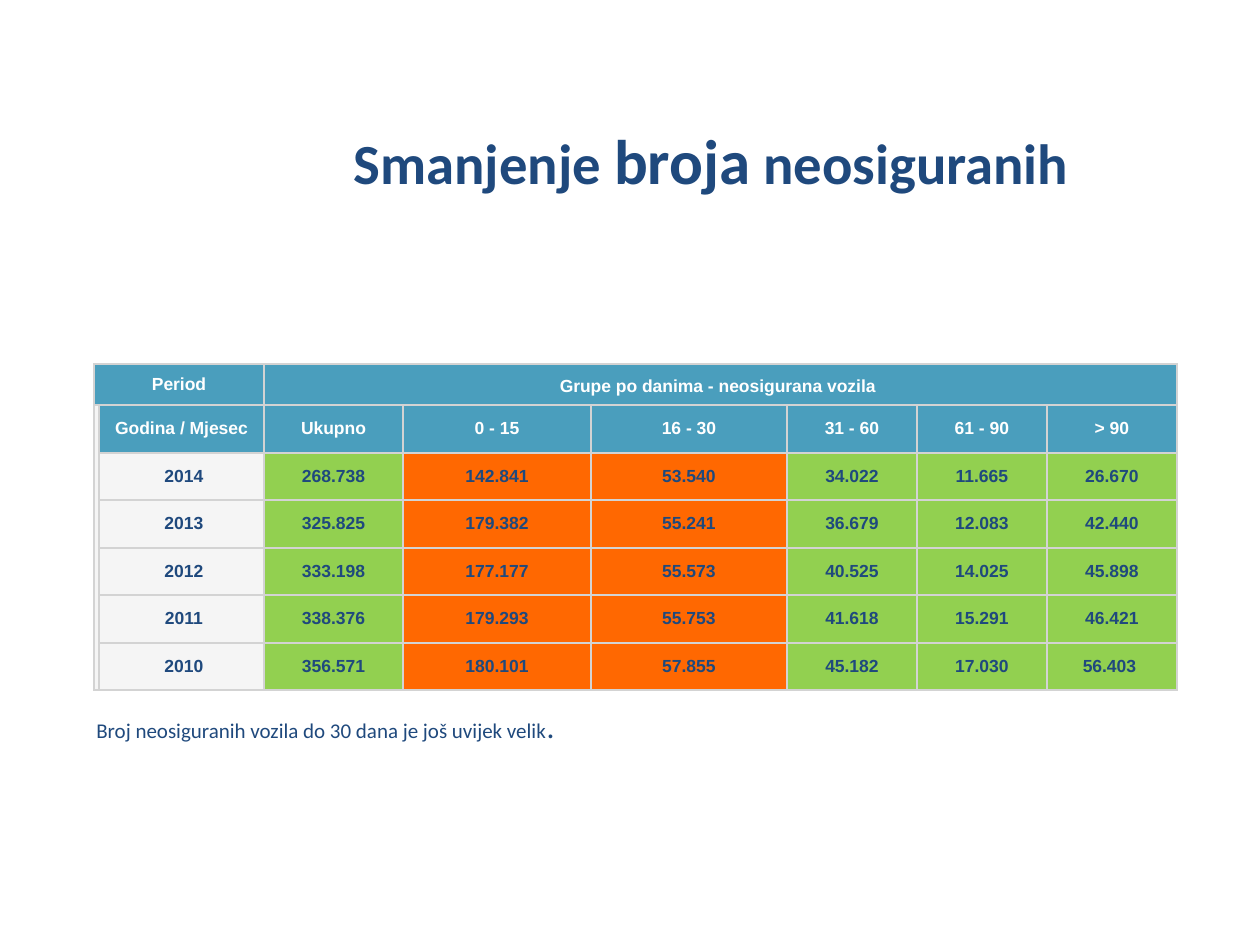
from typing import NamedTuple

from lxml import etree
from pptx import Presentation
from pptx import util as u
from pptx.dml.color import RGBColor
from pptx.enum import text as t
from pptx.oxml.ns import qn

NAVY = RGBColor(0x1F, 0x49, 0x7D)
WHITE = RGBColor(0xFF, 0xFF, 0xFF)
BLACK = RGBColor(0, 0, 0)
TEAL = RGBColor(0x4A, 0x9E, 0xBD)
PALE = RGBColor(0xF5, 0xF5, 0xF5)
GREEN = RGBColor(0x92, 0xD0, 0x50)
ORANGE = RGBColor(0xFF, 0x68, 0x01)
GRAY = RGBColor(0xD3, 0xD3, 0xD3)

SCALE = 914400 / 126
COLS = (5, 165, 139, 188, 196, 130, 130, 130)
ROWS = (41, 48, 47, 48, 47, 48, 47)
FILLS = (PALE, PALE, GREEN, ORANGE, ORANGE, GREEN, GREEN, GREEN)
HEADS = ("Godina / Mjesec", "Ukupno", "0 - 15", "16 - 30", "31 - 60", "61 - 90", "> 90")
DATA = (
    (" 2014", "268.738", "142.841", "53.540", "34.022", "11.665", "26.670"),
    (" 2013", "325.825", "179.382", "55.241", "36.679", "12.083", "42.440"),
    (" 2012", "333.198", "177.177", "55.573", "40.525", "14.025", "45.898"),
    (" 2011", "338.376", "179.293", "55.753", "41.618", "15.291", "46.421"),
    (" 2010", "356.571", "180.101", "57.855", "45.182", "17.030", "56.403 "),
)


class Box(NamedTuple):
    left: int
    top: int
    width: int
    height: int


def px(n: int) -> int:
    return round(n * SCALE)


def write(frame, words: str, *, size: float, color: RGBColor, font: str = "Calibri",
          bold: bool = False, align=t.PP_ALIGN.CENTER) -> None:
    para = frame.paragraphs[0]
    para.alignment = align
    run = para.add_run()
    run.text = words
    run.font.size = u.Pt(size)
    run.font.name = font
    run.font.bold = bold
    run.font.color.rgb = color


def add_box(slide, box: Box, wrap: bool, anchor):
    frame = slide.shapes.add_textbox(*map(px, box)).text_frame
    frame.word_wrap = wrap
    frame.vertical_anchor = anchor
    return frame


def edge(cell, sides: str) -> None:
    props = cell._tc.get_or_add_tcPr()
    for i, side in enumerate("LRTB"):
        line = etree.Element(qn(f"a:ln{side}"), w=str(u.Pt(1)))
        if side in sides:
            fill = etree.SubElement(line, qn("a:solidFill"))
            etree.SubElement(fill, qn("a:srgbClr"), val=str(GRAY))
        else:
            etree.SubElement(line, qn("a:noFill"))
        props.insert(i, line)


def style(cell, fill: RGBColor, sides: str = "LRTB") -> None:
    cell.margin_left = cell.margin_right = cell.margin_top = cell.margin_bottom = 0
    cell.vertical_anchor = t.MSO_ANCHOR.MIDDLE
    cell.fill.solid()
    cell.fill.fore_color.rgb = fill
    edge(cell, sides)


def add_grid(slide, left: int, top: int) -> None:
    box = Box(left, top, sum(COLS), sum(ROWS))
    grid = slide.shapes.add_table(len(ROWS), len(COLS), *map(px, box)).table
    for col, width in zip(grid.columns, COLS):
        col.width = px(width)
    for row, height in zip(grid.rows, ROWS):
        row.height = px(height)

    head = dict(size=10, color=WHITE, font="Arial", bold=True)
    body = {**head, "color": NAVY}
    for c in range(len(COLS)):
        style(grid.cell(0, c), TEAL)
    grid.cell(0, 0).merge(grid.cell(0, 1))
    grid.cell(0, 2).merge(grid.cell(0, 7))
    write(grid.cell(0, 0).text_frame, "Period", **head)
    group = grid.cell(0, 2).text_frame
    write(group, "Grupe po danima - neosigurana vozila", **head)
    write(group, " ", size=14, color=BLACK)

    last = len(ROWS) - 1
    for r, words in enumerate((HEADS, *DATA), 1):
        style(grid.cell(r, 0), PALE, "LR" + "T" * (r == 1) + "B" * (r == last))
        for c, word in enumerate(words, 1):
            cell = grid.cell(r, c)
            style(cell, TEAL if r == 1 else FILLS[c])
            write(cell.text_frame, word, **(head if r == 1 else body))


def main() -> None:
    """Build the slide on uninsured vehicles and save it."""
    deck = Presentation()
    deck.slide_width, deck.slide_height = px(1260), px(945)
    slide = deck.slides.add_slide(deck.slide_layouts[6])

    title = add_box(slide, Box(144, 125, 1134, 69), True, t.MSO_ANCHOR.MIDDLE)
    for words, size in (("Smanjenje ", 32.4), ("broja", 36), (" neosiguranih", 32.4)):
        write(title, words, size=size, color=NAVY, bold=True)

    add_grid(slide, 94, 364)

    note = add_box(slide, Box(84, 701, 489, 50), False, t.MSO_ANCHOR.TOP)
    for words, size in (("Broj neosiguranih vozila do 30 dana je još uvijek velik", 12), (".", 18)):
        write(note, words, size=size, color=NAVY, align=t.PP_ALIGN.LEFT)
    deck.save("out.pptx")


if __name__ == "__main__":
    main()
